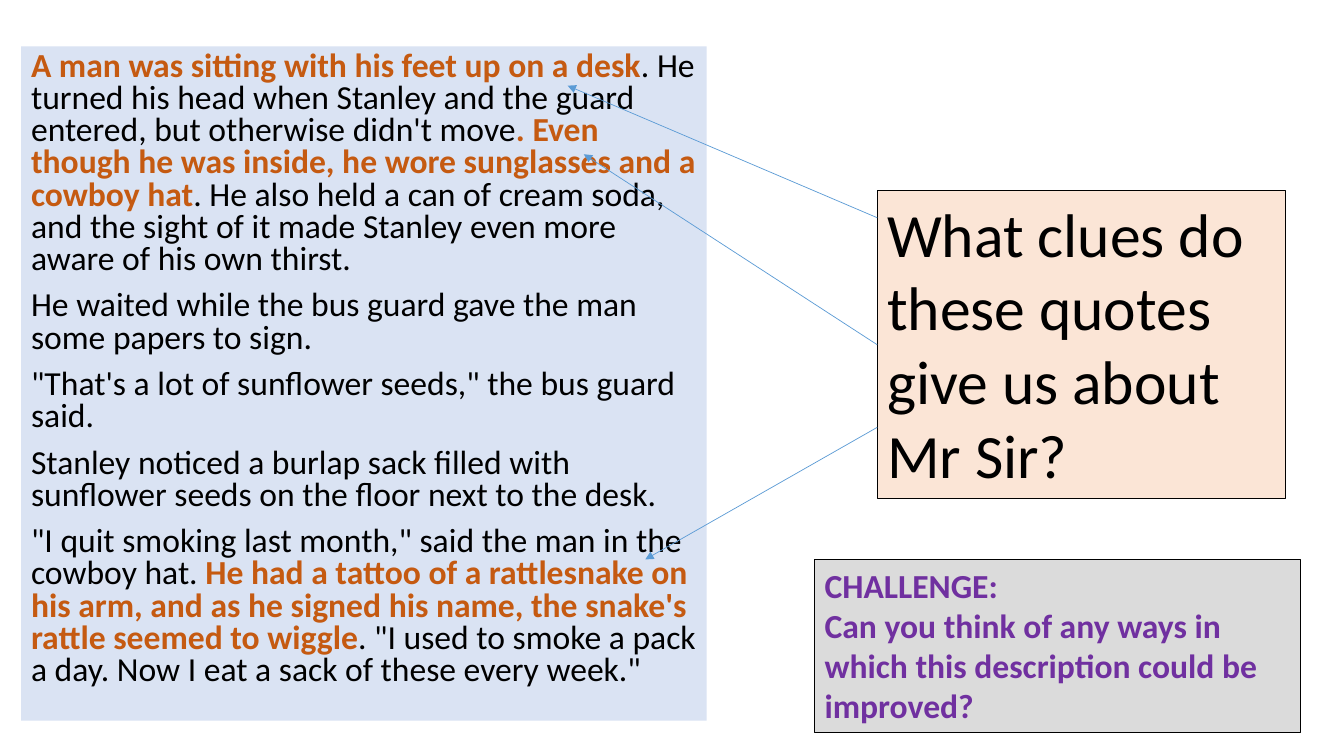
from lxml.etree import SubElement
from pptx import Presentation
from pptx.dml.color import RGBColor
from pptx.enum.shapes import MSO_CONNECTOR
from pptx.enum.text import MSO_AUTO_SIZE
from pptx.oxml.ns import qn
from pptx.util import Pt

EMU_PER_PX = 9144  # 100 px to the inch
COLORS = {
    "text": "000000",
    "quote": "C55A11",
    "passage": "DAE3F3",
    "question": "FBE5D6",
    "challenge": "DBDBDB",
    "challenge_text": "7030A0",
    "arrow": "5B9BD5",
}
LEFT_SIDE = 1

# Each paragraph is a list of spans; every second span is a highlighted quote.
PASSAGE = [
    ["", "A man was sitting with his feet up on a desk",
     ". He turned his head when Stanley and the guard entered, but otherwise didn't move",
     ". Even though he was inside, he wore sunglasses and a cowboy hat",
     ". He also held a can of cream soda, and the sight of it made Stanley even more "
     "aware of his own thirst."],
    ["He waited while the bus guard gave the man some papers to sign."],
    ["\"That's a lot of sunflower seeds,\" the bus guard said."],
    ["Stanley noticed a burlap sack filled with sunflower seeds on the floor next to the desk."],
    ["\"I quit smoking last month,\" said the man in the cowboy hat. ",
     "He had a tattoo of a rattlesnake on his arm, and as he signed his name, "
     "the snake's rattle seemed to wiggle",
     ". \"I used to smoke a pack a day. Now I eat a sack of these every week.\""],
]


def px(length):
    return length * EMU_PER_PX


def color(name):
    return RGBColor.from_string(COLORS[name])


class QuoteSlide:
    font_name = "Calibri"

    def __init__(self, deck):
        self.page = deck.slides.add_slide(deck.slide_layouts[6])

    def box(self, left, top, width, height, fill, outlined=True):
        box = self.page.shapes.add_textbox(px(left), px(top), px(width), px(height))
        box.fill.solid()
        box.fill.fore_color.rgb = color(fill)
        if outlined:
            box.line.color.rgb = color("text")
            box.line.width = Pt(0.75)
        box.text_frame.word_wrap = True
        return box

    def style(self, para, size, text_color="text", bold=False):
        para.font.name = self.font_name
        para.font.size = Pt(size)
        para.font.bold = bold
        para.font.color.rgb = color(text_color)

    def passage(self, box, paragraphs):
        frame = box.text_frame
        for index, spans in enumerate(paragraphs):
            para = frame.add_paragraph() if index else frame.paragraphs[0]
            para.line_spacing = 0.8
            para.space_before = Pt(10 if index else 0)
            self.style(para, 24)
            for position, text in enumerate(spans):
                if not text:
                    continue
                span = para.add_run()
                span.text = text
                if position % 2:
                    span.font.bold = True
                    span.font.color.rgb = color("quote")

    def message(self, box, lines, size, text_color="text", bold=False):
        frame = box.text_frame
        frame.auto_size = MSO_AUTO_SIZE.SHAPE_TO_FIT_TEXT
        frame.text = "\n".join(lines)
        for para in frame.paragraphs:
            self.style(para, size, text_color, bold)

    def arrow(self, start, end):
        arrow = self.page.shapes.add_connector(
            MSO_CONNECTOR.STRAIGHT, *map(px, start + end))
        arrow.line.color.rgb = color("arrow")
        arrow.line.width = Pt(0.5)
        SubElement(arrow.line._get_or_add_ln(), qn("a:tailEnd"), type="triangle")
        SubElement(arrow._element.spPr, qn("a:effectLst"))
        return arrow


def main():
    deck = Presentation()
    deck.slide_width, deck.slide_height = px(1333), px(750)
    slide = QuoteSlide(deck)

    extract = slide.box(21, 46, 680, 669, "passage", outlined=False)
    slide.passage(extract, PASSAGE)

    question = slide.box(870, 189, 405, 306, "question")
    slide.message(question, ["What clues do these quotes give us about Mr Sir?"], 44)

    slide.arrow((870, 216), (563, 85))
    middle_arrow = slide.arrow((870, 342), (579, 153))
    middle_arrow.begin_connect(question, LEFT_SIDE)
    slide.arrow((870, 424), (640, 555))

    challenge = slide.box(808, 555, 482, 172, "challenge")
    slide.message(
        challenge,
        ["CHALLENGE:",
         "Can you think of any ways in which this description could be improved?"],
        24, "challenge_text", bold=True)

    deck.save("out.pptx")


if __name__ == "__main__":
    main()
